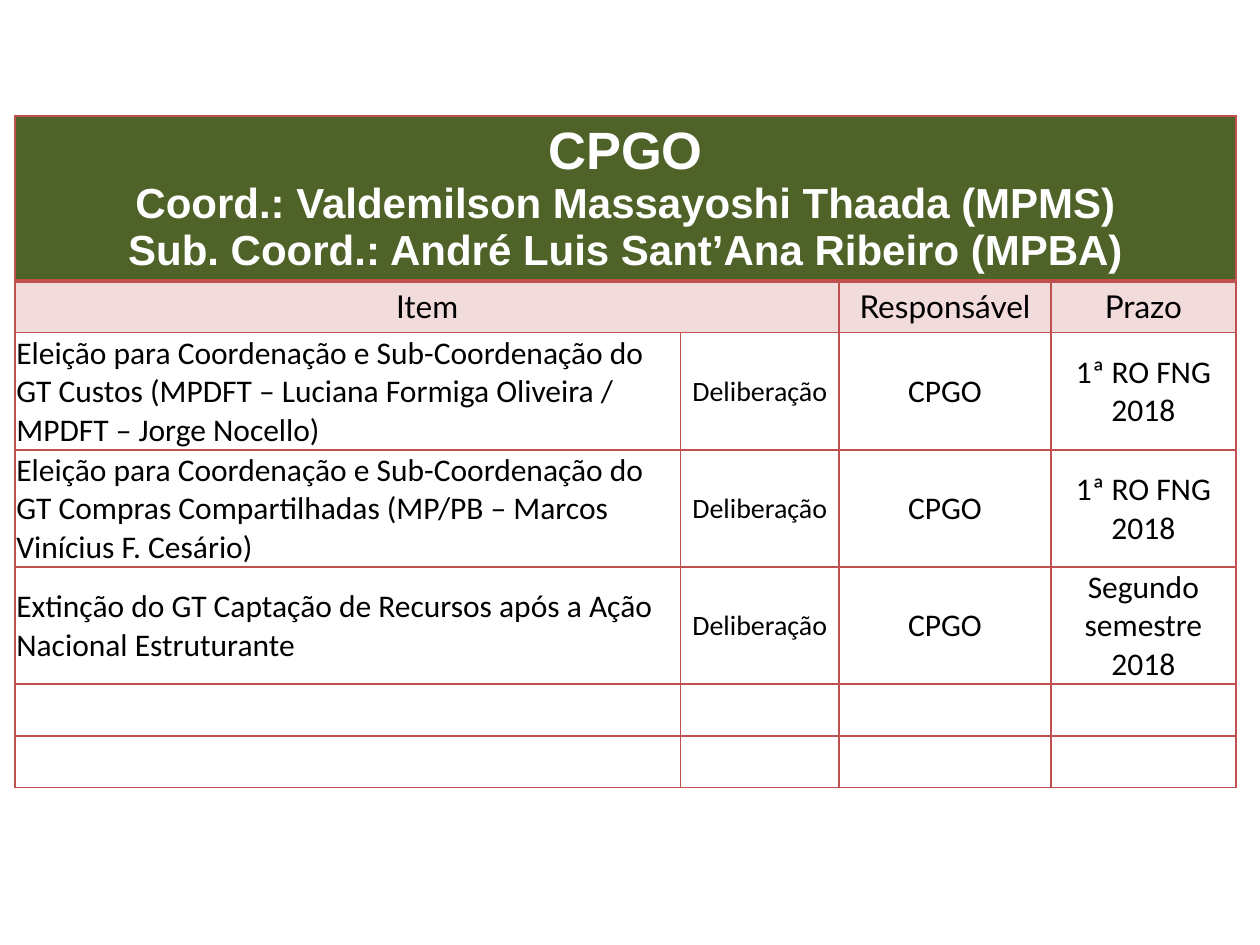
from lxml import etree
from pptx import Presentation
from pptx import util as u
from pptx.dml.color import RGBColor
from pptx.enum import text
from pptx.oxml import ns

RED, GREEN, PINK, WHITE, BLACK = "C0504D", "4F6228", "F2DCDB", "FFFFFF", "000000"
CENTER, LEFT = text.PP_ALIGN.CENTER, text.PP_ALIGN.LEFT

COLUMN_WIDTHS = [5.28, 1.26, 1.68, 1.47]
ROW_HEIGHTS = [1.31, 0.41, 0.93, 0.93, 0.93, 0.41, 0.41]
TITLE_LINES = [
    ("CPGO", 30),
    ("Coord.: Valdemilson Massayoshi Thaada (MPMS)", 24),
    ("Sub. Coord.: André Luis Sant’Ana Ribeiro (MPBA)", 24),
]
HEADINGS = {0: "Item", 2: "Responsável", 3: "Prazo"}
DECISIONS = [
    ("Eleição para Coordenação e Sub-Coordenação do GT Custos "
     "(MPDFT – Luciana Formiga Oliveira / MPDFT – Jorge Nocello)", "1ª RO FNG 2018"),
    ("Eleição para Coordenação e Sub-Coordenação do GT Compras Compartilhadas "
     "(MP/PB – Marcos Vinícius F. Cesário)", "1ª RO FNG 2018"),
    ("Extinção do GT Captação de Recursos após a Ação Nacional Estruturante",
     "Segundo semestre 2018"),
]


def color(value):
    return RGBColor.from_string(value)


def set_borders(cell, bottom=1):
    properties = cell._tc.get_or_add_tcPr()
    for side, width in (("L", 1), ("R", 1), ("T", 1), ("B", bottom)):
        line = etree.SubElement(properties, ns.qn(f"a:ln{side}"), w=str(u.Pt(width)))
        fill = etree.SubElement(line, ns.qn("a:solidFill"))
        etree.SubElement(fill, ns.qn("a:srgbClr"), val=RED)


def set_fill(cell, value):
    cell.fill.solid()
    cell.fill.fore_color.rgb = color(value)


def write_lines(cell, lines, font_name, font_color, bold=False, alignment=CENTER):
    cell.text_frame.text = "\n".join(line for line, size in lines)
    for paragraph, (line, size) in zip(cell.text_frame.paragraphs, lines):
        paragraph.alignment = alignment
        font = paragraph.runs[0].font
        font.name, font.size, font.bold = font_name, u.Pt(size), bold
        font.color.rgb = color(font_color)


def add_grid(slide, left, top, width, height):
    table = slide.shapes.add_table(
        len(ROW_HEIGHTS), len(COLUMN_WIDTHS), left, top, width, height).table
    table.first_row = table.horz_banding = False
    for column, size in zip(table.columns, COLUMN_WIDTHS):
        column.width = u.Inches(size)
    for index, (row, size) in enumerate(zip(table.rows, ROW_HEIGHTS)):
        row.height = u.Inches(size)
        for cell in row.cells:
            set_borders(cell, bottom=2 if index == 0 else 1)
            cell.fill.background()
    return table


def fill_title(table):
    title = table.cell(0, 0)
    title.merge(table.cell(0, 3))
    set_fill(title, GREEN)
    write_lines(title, TITLE_LINES, "Arial", WHITE, bold=True)


def fill_headings(table):
    table.cell(1, 0).merge(table.cell(1, 1))
    for column, heading in HEADINGS.items():
        cell = table.cell(1, column)
        set_fill(cell, PINK)
        write_lines(cell, [(heading, 18)], "Lato", BLACK)


def fill_decisions(table):
    for row, (item, deadline) in enumerate(DECISIONS, start=2):
        entries = [(item, 18), ("Deliberação", 16), ("CPGO", 18), (deadline, 18)]
        for column, entry in enumerate(entries):
            cell = table.cell(row, column)
            cell.vertical_anchor = text.MSO_ANCHOR.MIDDLE
            cell.margin_left = cell.margin_right = cell.margin_top = u.Inches(0.01)
            cell.margin_bottom = 0
            write_lines(cell, [entry], "Calibri", BLACK,
                        alignment=CENTER if column else LEFT)


def add_committee_table(slide, left, top, width, height):
    table = add_grid(slide, left, top, width, height)
    fill_title(table)
    fill_headings(table)
    fill_decisions(table)


def main():
    presentation = Presentation()
    presentation.slide_width = u.Inches(10)
    presentation.slide_height = u.Inches(7.5)
    slide = presentation.slides.add_slide(presentation.slide_layouts[6])
    add_committee_table(slide, u.Inches(0.12), u.Inches(0.92),
                        u.Inches(sum(COLUMN_WIDTHS)), u.Inches(sum(ROW_HEIGHTS)))
    presentation.save("out.pptx")


if __name__ == "__main__":
    main()
